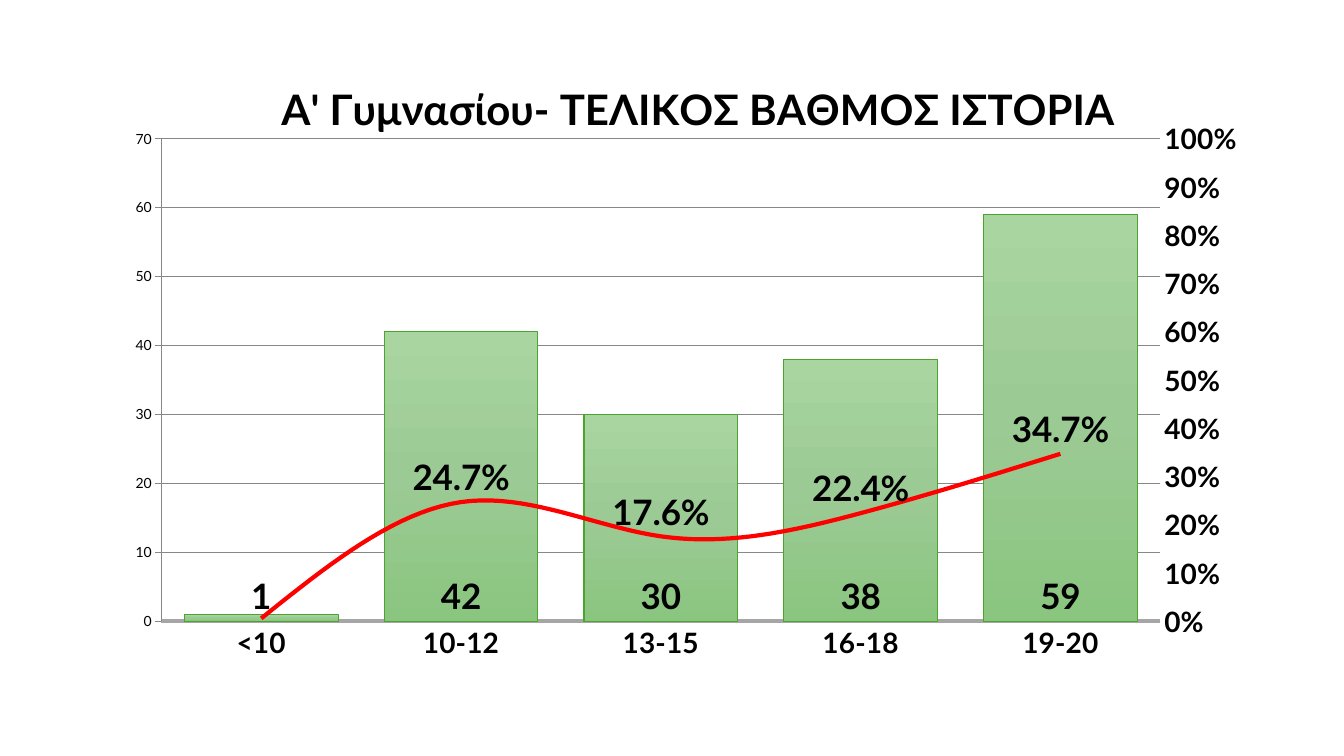
from copy import deepcopy

from lxml import etree
from pptx import Presentation
from pptx.chart.axis import ValueAxis
from pptx.chart.data import CategoryChartData
from pptx.dml.color import RGBColor
from pptx.enum.chart import (XL_CHART_TYPE, XL_LABEL_POSITION, XL_MARKER_STYLE,
                             XL_TICK_MARK)
from pptx.oxml import parse_xml
from pptx.oxml.ns import nsdecls, qn
from pptx.util import Pt

PX = 914400 / 100.8
FONT = "Lato"
BLACK = RGBColor(0x00, 0x00, 0x00)
AXIS_GREY = RGBColor(0xA6, 0xA6, 0xA6)
GRID_GREY = RGBColor(0xD9, 0xD9, 0xD9)
RED = RGBColor(0xFF, 0x00, 0x00)
BAR_EDGE = RGBColor(0x4C, 0xA3, 0x2D)
BAR_TOP = RGBColor(0xA8, 0xD5, 0xA0)
BAR_MIDDLE = RGBColor(0x9C, 0xCA, 0x94)
BAR_BOTTOM = RGBColor(0x8A, 0xC6, 0x80)
COLUMNS = XL_CHART_TYPE.COLUMN_CLUSTERED
INSIDE_BASE = XL_LABEL_POSITION.INSIDE_BASE
ABOVE = XL_LABEL_POSITION.ABOVE
NO_TICK = XL_TICK_MARK.NONE
NO_MARKER = XL_MARKER_STYLE.NONE

TITLE = "Α' Γυμνασίου- ΤΕΛΙΚΟΣ ΒΑΘΜΟΣ ΙΣΤΟΡΙΑ"
GRADES = ["<10", "10-12", "13-15", "16-18", "19-20"]
PUPILS = [1, 42, 30, 38, 59]
SHARES = [0.006, 0.247, 0.176, 0.224, 0.347]


def px(length):
    return round(length * PX)


def style_font(font, size):
    font.name, font.size, font.bold = FONT, Pt(size), True
    font.color.rgb = BLACK


def style_line(line, color, width):
    line.color.rgb = color
    line.width = Pt(width)


def style_axis(axis):
    axis.major_tick_mark = axis.minor_tick_mark = NO_TICK
    style_font(axis.tick_labels.font, 20)


def style_labels(series, position, number_format):
    labels = series.data_labels
    labels.show_value = True
    labels.position = position
    labels.number_format = number_format
    labels.number_format_is_linked = False
    style_font(labels.font, 25)


def manual_layout(x, y, w=None, h=None):
    parts = [("xMode", "edge"), ("yMode", "edge"), ("x", x), ("y", y)]
    if w is not None:
        parts = [("layoutTarget", "inner")] + parts + [("w", w), ("h", h)]
    body = "".join(f'<c:{tag} val="{value}"/>' for tag, value in parts)
    return parse_xml(f'<c:layout {nsdecls("c")}><c:manualLayout>{body}'
                     '</c:manualLayout></c:layout>')


def set_layout(parent, layout, index):
    for old in parent.findall(qn("c:layout")):
        parent.remove(old)
    parent.insert(index, layout)


def move_shares_to_right_axis(chart):
    plot_area = chart.plots[0]._element.getparent()
    bars = plot_area.find(qn("c:barChart"))
    shares = bars.findall(qn("c:ser"))[1]
    for bar_only in shares.findall(qn("c:invertIfNegative")):
        shares.remove(bar_only)
    line_plot = parse_xml(
        f'<c:lineChart {nsdecls("c")}><c:grouping val="standard"/>'
        '<c:varyColors val="0"/><c:marker val="1"/>'
        '<c:axId val="5001"/><c:axId val="5002"/></c:lineChart>')
    line_plot.insert(2, shares)
    bars.addnext(line_plot)
    left_axis = plot_area.find(qn("c:valAx"))
    hidden_axis = parse_xml(
        f'<c:catAx {nsdecls("c")}><c:axId val="5001"/>'
        '<c:scaling><c:orientation val="minMax"/></c:scaling>'
        '<c:delete val="1"/><c:axPos val="b"/><c:crossAx val="5002"/>'
        '<c:crosses val="autoZero"/></c:catAx>')
    right_axis = parse_xml(
        f'<c:valAx {nsdecls("c")}><c:axId val="5002"/>'
        '<c:scaling><c:orientation val="minMax"/></c:scaling>'
        '<c:delete val="0"/><c:axPos val="r"/>'
        '<c:numFmt formatCode="0%" sourceLinked="0"/>'
        '<c:tickLblPos val="nextTo"/><c:crossAx val="5001"/>'
        '<c:crosses val="max"/><c:crossBetween val="between"/></c:valAx>')
    left_axis.addnext(right_axis)
    right_axis.addnext(hidden_axis)
    return ValueAxis(right_axis)


def style_bars(plot):
    plot.gap_width = 30
    plot.vary_by_categories = False
    pupils = plot.series[0]
    fill = pupils.format.fill
    fill.gradient()
    fill.gradient_angle = 270
    stop_list = pupils._element.find(f".//{qn('a:gsLst')}")
    stop_list.insert(1, deepcopy(stop_list[0]))
    for stop, position, color in zip(fill.gradient_stops, (0, 0.5, 1),
                                     (BAR_TOP, BAR_MIDDLE, BAR_BOTTOM)):
        stop.position = position
        stop.color.rgb = color
    style_line(pupils.format.line, BAR_EDGE, 0.75)
    style_labels(pupils, INSIDE_BASE, "General")


def style_curve(shares):
    shares.smooth = True
    shares.marker.style = NO_MARKER
    style_line(shares.format.line, RED, 3)
    style_labels(shares, ABOVE, "0.0%")
    first_label = etree.Element(qn("c:dLbl"))
    etree.SubElement(first_label, qn("c:idx"), val="0")
    etree.SubElement(first_label, qn("c:delete"), val="1")
    shares._element.find(qn("c:dLbls")).insert(0, first_label)


def add_title(chart):
    heading = chart.chart_title.text_frame.paragraphs[0]
    heading.text = TITLE
    style_font(heading.font, 30)
    set_layout(chart.chart_title._element, manual_layout(0.156, 0.035), 1)


def add_grade_chart(slide, left, top, width, height):
    data = CategoryChartData()
    data.categories = GRADES
    data.add_series("Series 1", PUPILS)
    data.add_series("Series 2", SHARES, "0.0%")
    chart = slide.shapes.add_chart(COLUMNS, px(left), px(top), px(width),
                                   px(height), data).chart
    chart.has_legend = False
    chart.font.name, chart.font.size = FONT, Pt(10)
    chart.font.color.rgb = BLACK
    add_title(chart)

    share_axis = move_shares_to_right_axis(chart)
    count_axis = chart.value_axis
    for axis in (chart.category_axis, count_axis, share_axis):
        style_axis(axis)
    for axis in (chart.category_axis, count_axis):
        style_line(axis.format.line, AXIS_GREY, 3)
    share_axis.format.line.fill.background()
    for axis, top_value, step in ((count_axis, 170, 20), (share_axis, 1, 0.1)):
        axis.minimum_scale, axis.maximum_scale = 0, top_value
        axis.major_unit = step
    style_line(count_axis.major_gridlines.format.line, GRID_GREY, 0.75)

    bars, curve = chart.plots
    style_bars(bars)
    style_curve(curve.series[0])
    set_layout(bars._element.getparent(),
               manual_layout(0.059, 0.139, 0.862, 0.747), 0)


def main():
    deck = Presentation()
    deck.slide_width, deck.slide_height = px(1344), px(756)
    slide = deck.slides.add_slide(deck.slide_layouts[6])
    add_grade_chart(slide, 93, 49, 1159, 646)
    deck.save("out.pptx")


if __name__ == "__main__":
    main()
